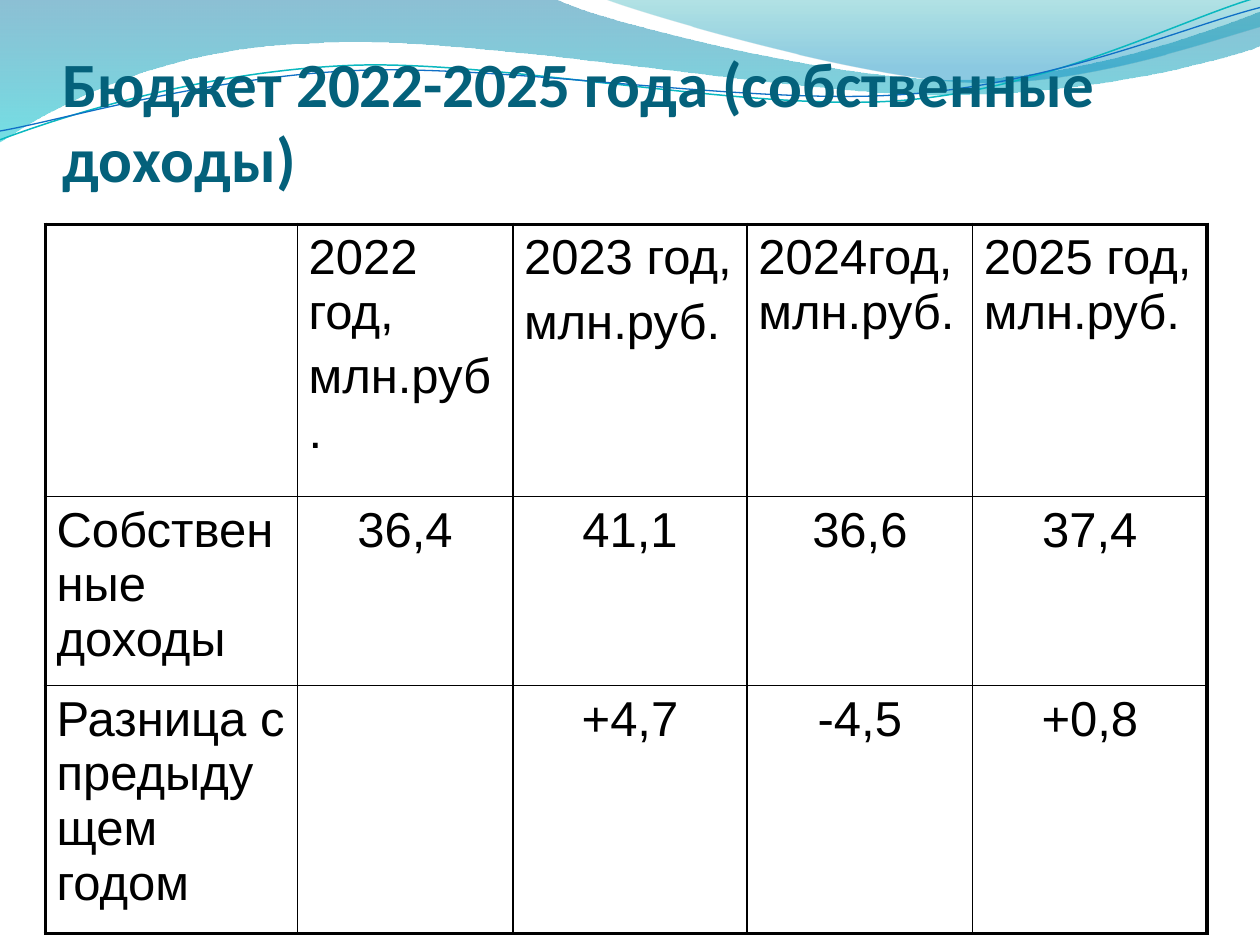
from lxml.etree import SubElement
from pptx import Presentation
from pptx.dml.color import RGBColor
from pptx.enum.text import MSO_ANCHOR as ANCHOR, PP_ALIGN as ALIGN
from pptx.oxml.ns import qn
from pptx.util import Inches, Pt

COLORS = {
    "title": "04617B", "text": "000000", "border": "000000",
    "deep": "0074A1", "aqua": "00C6CF", "teal": "00A1A9", "sky": "008BBF",
    "teal_line": "0AB8BF", "blue_line": "0F6FC6",
}
UNITS = 100
LEFT_WAVE = [
    (0, 0), (4.4, -0.01),
    (4.76, 0.17, 6.64, 0.63, 7.58, 0.63), (8.53, 0.63, 9.58, 0.26, 10, 0.09),
    (10.01, 0.36),
    (9.83, 0.44, 8.7, 0.76, 7.46, 0.75), (6.22, 0.75, 3.82, 0.28, 2.57, 0.34),
    (1.29, 0.36, 0.46, 0.83, -0.01, 1.13), (0, 0),
]
RIGHT_WAVE = [
    (4.79, -0.01),
    (5.09, 0.11, 6.82, 0.62, 7.69, 0.65), (8.56, 0.69, 9.61, 0.32, 10, 0.21),
    (10, 0), (4.79, -0.01),
]
TEAL_CURVE = [
    (0, 1.11),
    (0.48, 0.93, 1.58, 0.57, 2.77, 0.52), (3.95, 0.47, 5.93, 0.89, 7.13, 0.8),
    (8.33, 0.71, 9.38, 0.15, 9.98, -0.02),
]
BLUE_CURVE = [
    (0, 1.04),
    (0.47, 0.96, 1.64, 0.61, 2.83, 0.56), (4.03, 0.51, 5.97, 0.84, 7.17, 0.75),
    (8.36, 0.67, 9.41, 0.21, 10, 0.06),
]
COLUMN_WIDTHS = [2, 1.71, 1.86, 1.79, 1.86]
ROW_HEIGHTS = [2.16, 1.4, 1.83]
BUDGET = [
    ["", "2022 год,\nмлн.руб.", "2023 год,\nмлн.руб.", "2024год, млн.руб.", "2025 год, млн.руб."],
    ["Собственные доходы", "36,4", "41,1", "36,6", "37,4"],
    ["Разница с предыдущем годом", "", "+4,7", "-4,5", "+0,8"],
]


def rgb(name):
    """Return the named colour."""
    return RGBColor.from_string(COLORS[name])


def add_outline(slide, segments, close):
    """Draw a freeform from points and cubic curves given in inches."""
    anchors = [tuple(round(v * UNITS) for v in segment[-2:]) for segment in segments]
    left, top = (min(values) for values in zip(*anchors))
    builder = slide.shapes.build_freeform(*anchors[0], scale=Inches(1 / UNITS))
    builder.add_line_segments(anchors[1:], close=close)
    sp = builder.convert_to_shape()
    sp.shadow.inherit = False
    lines = list(sp.element.spPr.iter(qn("a:lnTo")))
    for line, segment in zip(lines, segments[1:]):
        if len(segment) == 6:
            curve = line.makeelement(qn("a:cubicBezTo"))
            for x, y in zip(segment[::2], segment[1::2]):
                SubElement(curve, qn("a:pt"), x=str(round(x * UNITS) - left), y=str(round(y * UNITS) - top))
            line.getparent().replace(line, curve)
    return sp


def add_wave(slide, segments, stops):
    """Add a wave with a translucent vertical gradient."""
    sp = add_outline(slide, segments, True)
    sp.line.fill.background()
    sp.fill.gradient()
    sp.fill.gradient_angle = 270
    for stop, (position, color, _) in zip(sp.fill.gradient_stops, stops):
        stop.position = position
        stop.color.rgb = rgb(color)
    colors = sp.element.spPr.iter(qn("a:srgbClr"))
    for element, (_, _, alpha) in zip(colors, stops):
        SubElement(element, qn("a:alpha"), val=str(alpha * 1000))


def add_curve(slide, segments, color, width):
    """Add an open curved line."""
    sp = add_outline(slide, segments, False)
    sp.fill.background()
    sp.line.color.rgb = rgb(color)
    sp.line.width = Pt(width)


def write_text(tf, text, font="Arial", size=28, color="text", bold=False, align=ALIGN.LEFT, gap=5.6):
    """Write one formatted paragraph for each line of the text."""
    for i, line in enumerate(text.split("\n")):
        p = tf.add_paragraph() if i else tf.paragraphs[0]
        p.alignment = align
        if i:
            p.space_before = Pt(gap)
        r = p.add_run()
        r.text = line
        r.font.name, r.font.size, r.font.bold = font, Pt(size), bold
        r.font.color.rgb = rgb(color)


def add_title(slide, text):
    """Add the slide title, anchored to the bottom of its box."""
    box = slide.shapes.add_textbox(Inches(0.5), Inches(0.3), Inches(9), Inches(1.25))
    tf = box.text_frame
    tf.word_wrap = True
    tf.vertical_anchor = ANCHOR.BOTTOM
    tf.margin_left = tf.margin_right = tf.margin_bottom = 0
    write_text(tf, text, font="Calibri", size=36, color="title", bold=True)


def set_borders(cell, widths):
    """Set the left, right, top and bottom borders of a cell, in points."""
    tc_pr = cell._tc.get_or_add_tcPr()
    for side, width in zip("LRTB", widths):
        line = SubElement(tc_pr, qn(f"a:ln{side}"), w=str(Pt(width)))
        fill = SubElement(line, qn("a:solidFill"))
        SubElement(fill, qn("a:srgbClr"), val=COLORS["border"])


def add_budget_table(slide):
    """Add the budget table with a heavy outer frame."""
    rows, cols = len(ROW_HEIGHTS), len(COLUMN_WIDTHS)
    table = slide.shapes.add_table(
        rows, cols, Inches(0.36), Inches(1.78), Inches(sum(COLUMN_WIDTHS)), Inches(sum(ROW_HEIGHTS))
    ).table
    table.first_row = table.horz_banding = False
    for column, width in zip(table.columns, COLUMN_WIDTHS):
        column.width = Inches(width)
    for row, height in zip(table.rows, ROW_HEIGHTS):
        row.height = Inches(height)
    for i, texts in enumerate(BUDGET):
        for j, text in enumerate(texts):
            cell = table.cell(i, j)
            cell.margin_left = cell.margin_right = Inches(0.09)
            outer = (j == 0, j == cols - 1, i == 0, i == rows - 1)
            set_borders(cell, [2.25 if edge else 1 for edge in outer])
            cell.fill.background()
            if text:
                write_text(cell.text_frame, text, align=ALIGN.CENTER if i and j else ALIGN.LEFT)


def main():
    """Build and save the slide."""
    prs = Presentation()
    prs.slide_width, prs.slide_height = Inches(10), Inches(7.5)
    s = prs.slides.add_slide(prs.slide_layouts[6])
    add_wave(s, LEFT_WAVE, [(0, "deep", 45), (1, "aqua", 55)])
    add_wave(s, RIGHT_WAVE, [(0, "teal", 30), (0.8, "sky", 45)])
    add_curve(s, TEAL_CURVE, "teal_line", 0.85)
    add_curve(s, BLUE_CURVE, "blue_line", 0.75)
    add_title(s, "Бюджет 2022-2025 года (собственные доходы)")
    add_budget_table(s)
    prs.save("out.pptx")


if __name__ == "__main__":
    main()
